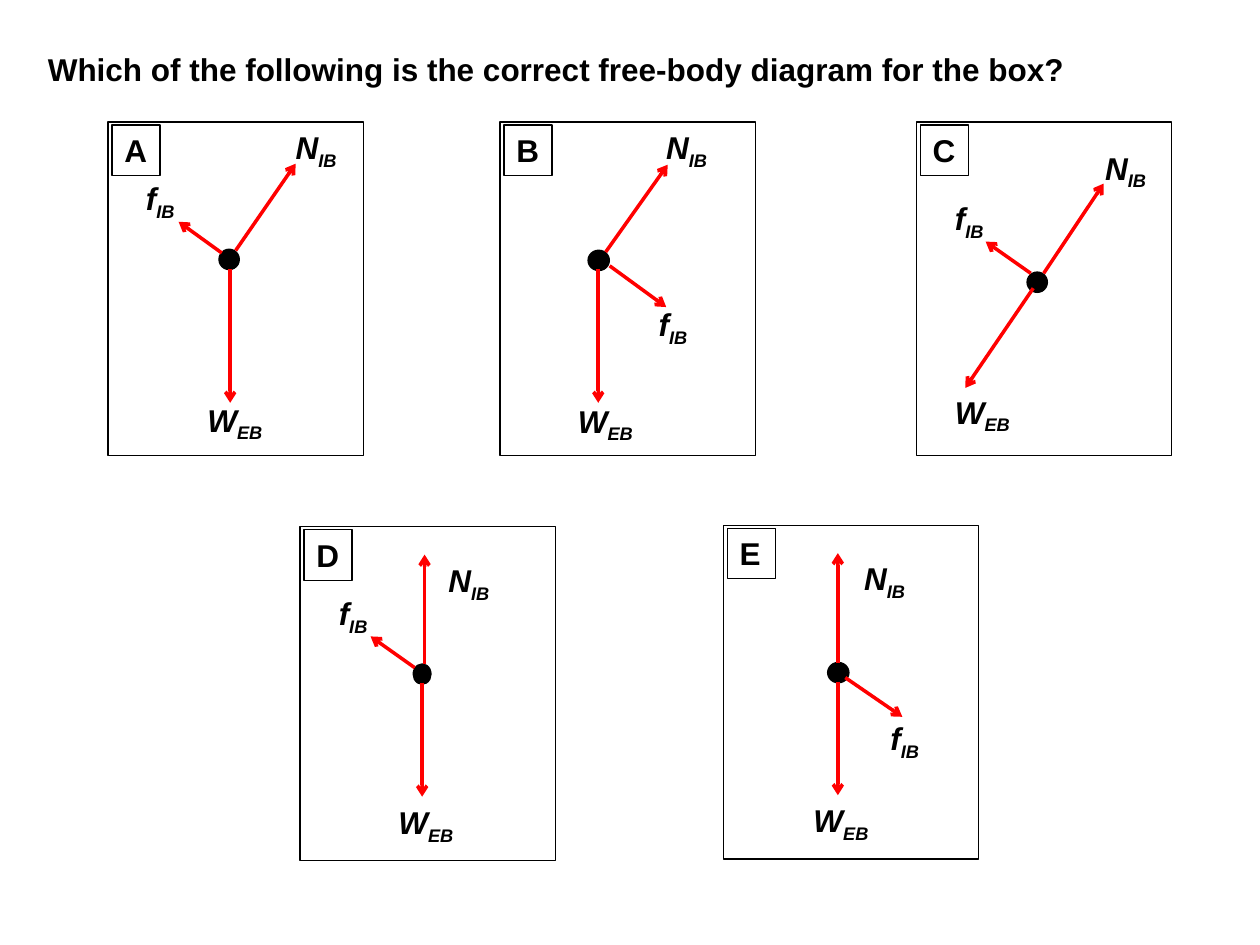
from collections import namedtuple

from lxml import etree
from pptx import Presentation
from pptx import util as u
from pptx.dml.color import RGBColor
from pptx.enum import shapes, text
from pptx.oxml import ns

COLOURS = {"ink": "000000", "force": "FF0000"}
FRAME_SIZE = (5.15, 6.73)
LABEL_HEIGHT = 1.02
LABELS = {"f": ("IB", 1.19), "N": ("IB", 1.35), "W": ("EB", 1.7)}

Diagram = namedtuple("Diagram", "letter corner dot dot_width arrows labels")

DIAGRAMS = [
    Diagram("A", (2.18, 2.46), (2.44, 2.77), 0.41,
            [(2.57, 2.59, 3.78, 0.84), (2.46, 2.97, 2.46, 5.66), (2.29, 2.64, 1.42, 2.01)],
            {"f": (0.51, 1.02), "N": (3.53, 0), "W": (1.75, 5.49)}),
    Diagram("B", (10.08, 2.46), (1.99, 2.79), 0.43,
            [(2.13, 2.62, 3.38, 0.86), (1.98, 2.97, 1.98, 5.66), (2.21, 2.9, 3.35, 3.73)],
            {"f": (2.95, 3.56), "N": (3.1, 0), "W": (1.32, 5.51)}),
    Diagram("C", (18.47, 2.46), (2.44, 3.23), 0.41,
            [(2.57, 3.05, 3.78, 1.24), (2.36, 3.35, 0.99, 5.36), (2.31, 3.05, 1.4, 2.41)],
            {"f": (0.53, 1.42), "N": (3.56, 0.41), "W": (0.53, 5.33)}),
    Diagram("D", (6.05, 10.62), (2.46, 2.97), 0.36,
            [(2.51, 2.77, 2.51, 0.56), (2.46, 3.15, 2.46, 5.44), (2.31, 2.84, 1.42, 2.21)],
            {"f": (0.53, 1.24), "N": (2.74, 0.56), "W": (1.73, 5.44)}),
    Diagram("E", (14.58, 10.59), (2.32, 2.97), 0.43,
            [(2.31, 2.77, 2.31, 0.56), (2.31, 3.15, 2.31, 5.44), (2.46, 3.07, 3.61, 3.86)],
            {"f": (3.12, 3.78), "N": (2.59, 0.56), "W": (1.57, 5.44)}),
]


def colour(key):
    """Return the named colour."""
    return RGBColor.from_string(COLOURS[key])


def cm(*lengths):
    """Convert several lengths from centimetres."""
    return [u.Cm(length) for length in lengths]


def style_run(run, italic=False):
    """Format a run in the slide's bold face."""
    run.font.name = "Arial"
    run.font.size = u.Pt(18)
    run.font.bold = True
    run.font.italic = italic
    run.font.color.rgb = colour("ink")


def add_title(slide, box):
    """Write the question in the title placeholder."""
    question = slide.shapes.title
    question.left, question.top, question.width, question.height = cm(*box)
    frame = question.text_frame
    frame.text = "Which of the following is the correct free-body diagram for the box?"
    frame.auto_size = text.MSO_AUTO_SIZE.NONE
    frame.vertical_anchor = text.MSO_ANCHOR.TOP
    frame.paragraphs[0].alignment = text.PP_ALIGN.LEFT
    style_run(frame.paragraphs[0].runs[0])


def add_outline(slide, preset, box, filled=False):
    """Add a thinly outlined shape, solid or empty."""
    outline = slide.shapes.add_shape(preset, *cm(*box))
    outline.shadow.inherit = False
    outline.line.color.rgb = colour("ink")
    outline.line.width = u.Pt(0.75)
    if filled:
        outline.fill.solid()
        outline.fill.fore_color.rgb = colour("ink")
    else:
        outline.fill.background()
    return outline


def add_force(slide, ends):
    """Add a force arrow pointing at its second end."""
    force = slide.shapes.add_connector(shapes.MSO_CONNECTOR.STRAIGHT, *cm(*ends))
    force.line.color.rgb = colour("force")
    force.line.width = u.Pt(2)
    etree.SubElement(force.line._get_or_add_ln(), ns.qn("a:tailEnd"), type="arrow")
    etree.SubElement(force._element.spPr, ns.qn("a:effectLst"))


def add_label(slide, symbol, left, top):
    """Add a force symbol with its subscript."""
    subscript, width = LABELS[symbol]
    label = slide.shapes.add_textbox(*cm(left, top, width, LABEL_HEIGHT))
    label.text_frame.word_wrap = False
    paragraph = label.text_frame.paragraphs[0]
    for part in (symbol, subscript):
        run = paragraph.add_run()
        run.text = part
        style_run(run, italic=True)
    run.font._element.set("baseline", "-25000")


def add_badge(slide, letter, left, top):
    """Add the boxed answer letter."""
    badge = add_outline(slide, shapes.MSO_SHAPE.RECTANGLE, (left, top, 0.97, LABEL_HEIGHT))
    frame = badge.text_frame
    frame.text = letter
    frame.word_wrap = False
    frame.vertical_anchor = text.MSO_ANCHOR.TOP
    frame.paragraphs[0].alignment = text.PP_ALIGN.LEFT
    style_run(frame.paragraphs[0].runs[0])


def add_diagram(slide, diagram):
    """Draw one answer, with all parts relative to its frame corner."""
    left, top = diagram.corner
    dot_x, dot_y = diagram.dot
    width, height = diagram.dot_width, 0.41
    add_outline(slide, shapes.MSO_SHAPE.OVAL,
                (left + dot_x - width / 2, top + dot_y - height / 2, width, height), filled=True)
    for x1, y1, x2, y2 in diagram.arrows:
        add_force(slide, (left + x1, top + y1, left + x2, top + y2))
    for symbol, (x, y) in diagram.labels.items():
        add_label(slide, symbol, left + x, top + y)
    add_outline(slide, shapes.MSO_SHAPE.RECTANGLE, (left, top, *FRAME_SIZE))
    add_badge(slide, diagram.letter, left + 0.08, top + 0.06)


def main():
    """Build and save the slide."""
    deck = Presentation()
    deck.slide_width, deck.slide_height = cm(25.4, 19.05)
    slide = deck.slides.add_slide(deck.slide_layouts[5])
    add_title(slide, (0.71, 0.89, 23.7, 1.02))
    for diagram in DIAGRAMS:
        add_diagram(slide, diagram)
    deck.save("out.pptx")


if __name__ == "__main__":
    main()
